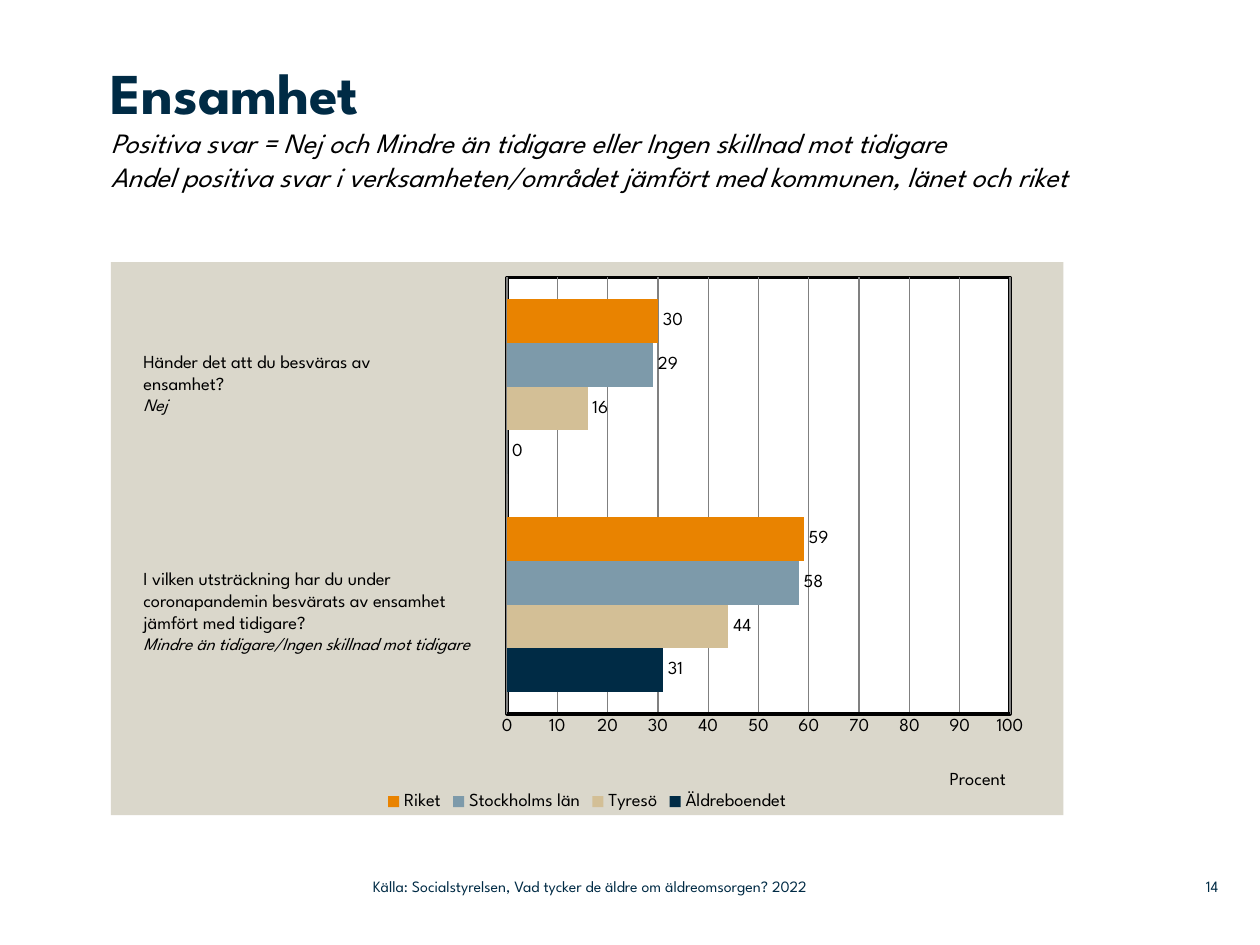
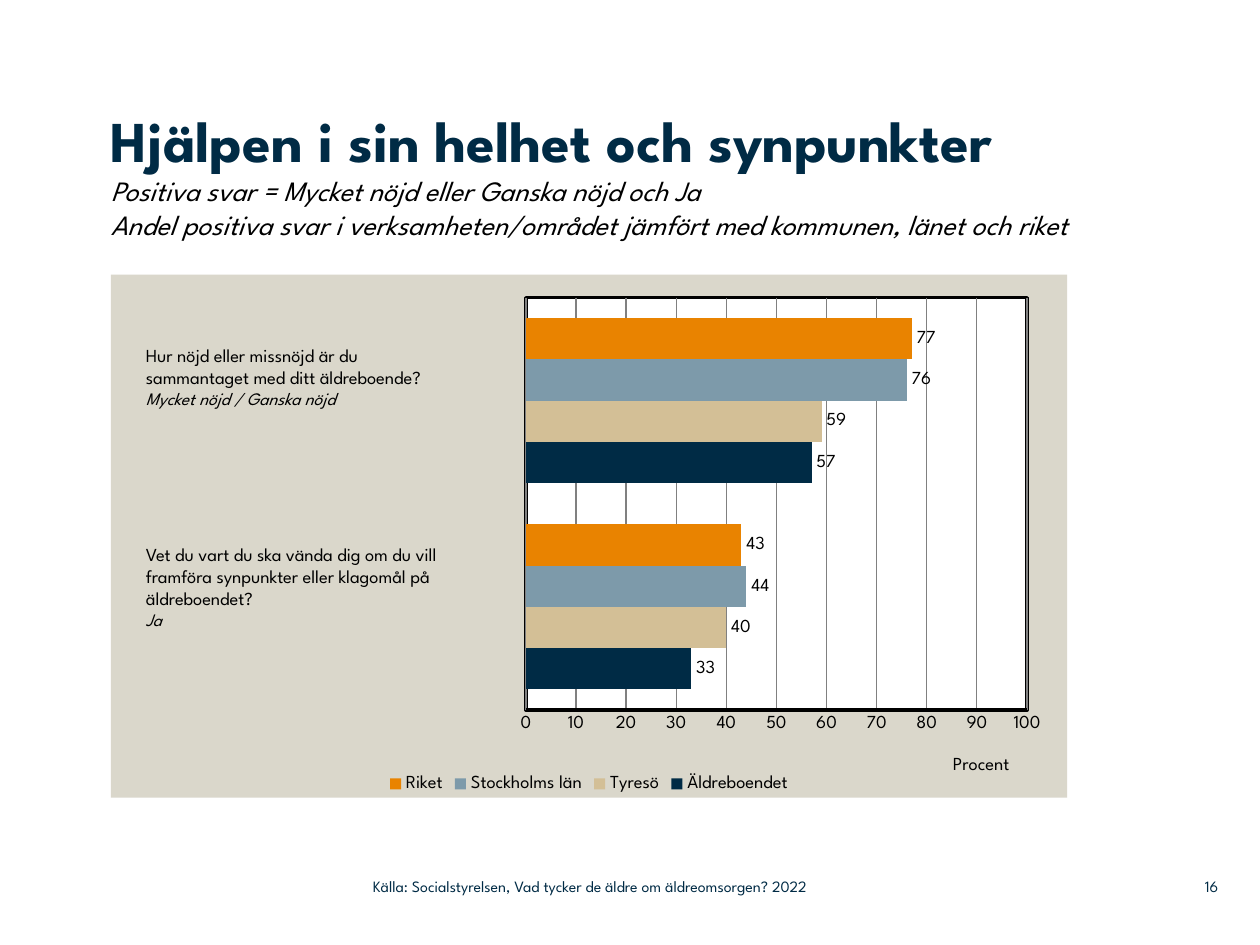
from lxml import etree
from pptx import Presentation
from pptx.chart.data import CategoryChartData
from pptx.dml.color import RGBColor
from pptx.enum.chart import XL_CHART_TYPE, XL_LABEL_POSITION, XL_LEGEND_POSITION, XL_TICK_MARK
from pptx.enum.text import MSO_ANCHOR, MSO_AUTO_SIZE, PP_ALIGN
from pptx.oxml import parse_xml
from pptx.oxml.ns import nsdecls, qn
from pptx.util import Inches, Pt

BAR = XL_CHART_TYPE.BAR_CLUSTERED
END = XL_LABEL_POSITION.OUTSIDE_END
LOW = XL_LEGEND_POSITION.BOTTOM
BARE = XL_TICK_MARK.NONE
TOP, MID = MSO_ANCHOR.TOP, MSO_ANCHOR.MIDDLE
FIXED = MSO_AUTO_SIZE.NONE
LEFT, RIGHT = PP_ALIGN.LEFT, PP_ALIGN.RIGHT

NAVY = RGBColor(0x00, 0x2B, 0x45)
BLACK = RGBColor(0x00, 0x00, 0x00)
GREY = RGBColor(0x80, 0x80, 0x80)
SAND = RGBColor(0xD3, 0xBF, 0x96)
STEEL = RGBColor(0x7D, 0x9A, 0xAA)
AMBER = RGBColor(0xE9, 0x83, 0x00)

FACE = "League Spartan"
HEAD = {"name": FACE, "size": Pt(33), "bold": True, "italic": False}
SUB = {"name": FACE, "size": Pt(16), "bold": False, "italic": True}
ASK = {"name": FACE, "size": Pt(10.5)}
REPLY = {"name": FACE, "size": Pt(10), "italic": True}
FOOT = {"name": FACE, "size": Pt(9)}
PLAIN = {"name": FACE, "size": Pt(10.5), "bold": False}

GROUPS = [
    ("Äldreboendet", NAVY),
    ("Tyresö", SAND),
    ("Stockholms län", STEEL),
    ("Riket", AMBER),
]
SCOPE = "Andel positiva svar i verksamheten/området jämfört med kommunen, länet och riket"
SOURCE = "Källa: Socialstyrelsen, Vad tycker de äldre om äldreomsorgen? 2022"

PAGES = [
    {
        "title": "Ensamhet",
        "sub": "Positiva svar = Nej och Mindre än tidigare eller Ingen skillnad mot tidigare",
        "head": (0.88, 0.45, 7.81, 1.64),
        "chart": (0.88, 2.08, 7.56, 4.39),
        "plot": (0.416, 0.028, 0.528, 0.789),
        "vals": [(31, 0), (44, 16), (58, 29), (59, 30)],
        "asks": [
            ((1.04, 4.45, 2.94, 0.97),
             ["I vilken utsträckning har du under coronapandemin besvärats av ensamhet jämfört med tidigare?"],
             "Mindre än tidigare/Ingen skillnad mot tidigare"),
            ((1.04, 2.73, 2.94, 0.63),
             ["Händer det att du besväras av", "ensamhet?"], "Nej"),
        ],
        "num": "14",
    },
    {
        "title": "Hjälpen i sin helhet och synpunkter",
        "sub": "Positiva svar = Mycket nöjd eller Ganska nöjd och Ja",
        "head": (0.88, 0.83, 7.79, 1.34),
        "chart": (0.88, 2.18, 7.59, 4.15),
        "plot": (0.434, 0.044, 0.524, 0.789),
        "vals": [(33, 57), (40, 59), (44, 76), (43, 77)],
        "asks": [
            ((1.06, 2.68, 3.1, 0.81),
             ["Hur nöjd eller missnöjd är du", "sammantaget med ditt äldreboende?"],
             "Mycket nöjd / Ganska nöjd"),
            ((1.06, 4.26, 3.05, 0.81),
             ["Vet du vart du ska vända dig om du vill framföra synpunkter eller klagomål på äldreboendet?"],
             "Ja"),
        ],
        "num": "16",
    },
]


def write(box, lines, flush=True, anchor=TOP, align=LEFT):
    frame = box.text_frame
    frame.word_wrap = True
    frame.auto_size = FIXED
    frame.vertical_anchor = anchor
    if flush:
        for side in ("left", "top", "right", "bottom"):
            setattr(frame, f"margin_{side}", 0)
    for i, (text, form, tone) in enumerate(lines):
        para = frame.add_paragraph() if i else frame.paragraphs[0]
        para.alignment = align
        run = para.add_run()
        run.text = text
        for key, val in form.items():
            setattr(run.font, key, val)
        run.font.color.rgb = tone


def place(node, spot, parts):
    old = node.find(qn("c:layout"))
    if old is not None:
        node.remove(old)
    layout = parse_xml(f"<c:layout {nsdecls('c')}><c:manualLayout/></c:layout>")
    for tag, val in parts.items():
        etree.SubElement(layout[0], qn(f"c:{tag}")).set("val", str(val))
    node.insert(spot, layout)


deck = Presentation()
deck.slide_width, deck.slide_height = Inches(10), Inches(7.5)

for page in PAGES:
    slide = deck.slides.add_slide(deck.slide_layouts[5])
    title = slide.shapes.title
    title.left, title.top, title.width, title.height = map(Inches, page["head"])
    write(title, [(page["title"], HEAD, NAVY), (page["sub"], SUB, BLACK), (SCOPE, SUB, BLACK)])

    data = CategoryChartData()
    data.categories = ["1", "2"]
    for (name, tone), vals in zip(GROUPS, page["vals"]):
        data.add_series(name, vals)
    chart = slide.shapes.add_chart(BAR, *map(Inches, page["chart"]), data).chart
    chart.has_title = False
    chart.has_legend = True
    chart.legend.position = LOW
    chart.legend.include_in_layout = False

    plot = chart.plots[0]
    plot.gap_width = 100
    plot.overlap = 0
    plot.vary_by_categories = False
    plot.has_data_labels = True
    tags = plot.data_labels
    tags.show_value = True
    tags.position = END
    for item, (name, tone) in zip(plot.series, GROUPS):
        item.format.fill.solid()
        item.format.fill.fore_color.rgb = tone

    chart.category_axis.visible = False
    axis = chart.value_axis
    axis.minimum_scale, axis.maximum_scale, axis.major_unit = 0, 100, 10
    axis.major_tick_mark = axis.minor_tick_mark = BARE
    axis.has_major_gridlines = True
    for line, tone, wide in (
        (axis.format.line, BLACK, 2),
        (axis.major_gridlines.format.line, GREY, 0.75),
    ):
        line.color.rgb = tone
        line.width = Pt(wide)
    unit = axis.axis_title
    unit.text_frame.text = "Procent"
    word = unit.text_frame.paragraphs[0].runs[0].font
    for font in (chart.font, chart.legend.font, axis.tick_labels.font, tags.font, word):
        for key, val in PLAIN.items():
            setattr(font, key, val)
        font.color.rgb = BLACK

    root = chart.element.find(qn("c:chart"))
    area = root.find(qn("c:plotArea"))
    place(unit._element, 1, {"xMode": "edge", "yMode": "edge", "x": 0.877, "y": 0.913})
    place(area, 0, {"layoutTarget": "inner", "xMode": "edge", "yMode": "edge",
                    **dict(zip("xywh", page["plot"]))})
    edge = '<a:solidFill><a:srgbClr val="000000"/></a:solidFill>'
    for last, fill, rim in (
        (root, "DAD7CB", "<a:ln><a:noFill/></a:ln>"),
        (area[-1], "FFFFFF", f'<a:ln w="25400">{edge}</a:ln>'),
    ):
        last.addnext(parse_xml(
            f"<c:spPr {nsdecls('c', 'a')}><a:solidFill>"
            f'<a:srgbClr val="{fill}"/></a:solidFill>{rim}</c:spPr>'))

    for spot, ask, reply in page["asks"]:
        box = slide.shapes.add_textbox(*map(Inches, spot))
        lines = [(text, ASK, BLACK) for text in ask]
        write(box, lines + [(reply, REPLY, BLACK)], flush=False)

    for left, width, text, align in ((2.96, 4.43, SOURCE, LEFT), (9.2, 0.47, page["num"], RIGHT)):
        box = slide.shapes.add_textbox(*map(Inches, (left, 6.89, width, 0.29)))
        write(box, [(text, FOOT, NAVY)], anchor=MID, align=align)

deck.save("out.pptx")
